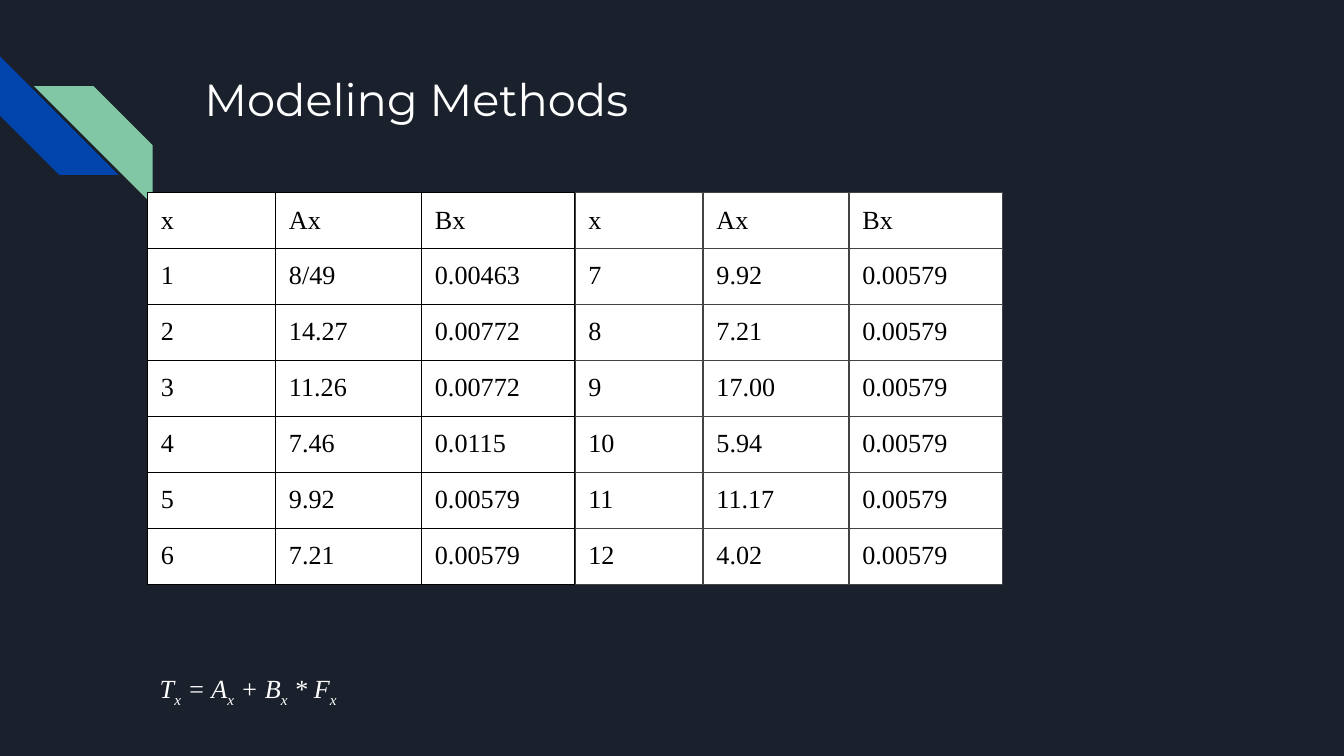
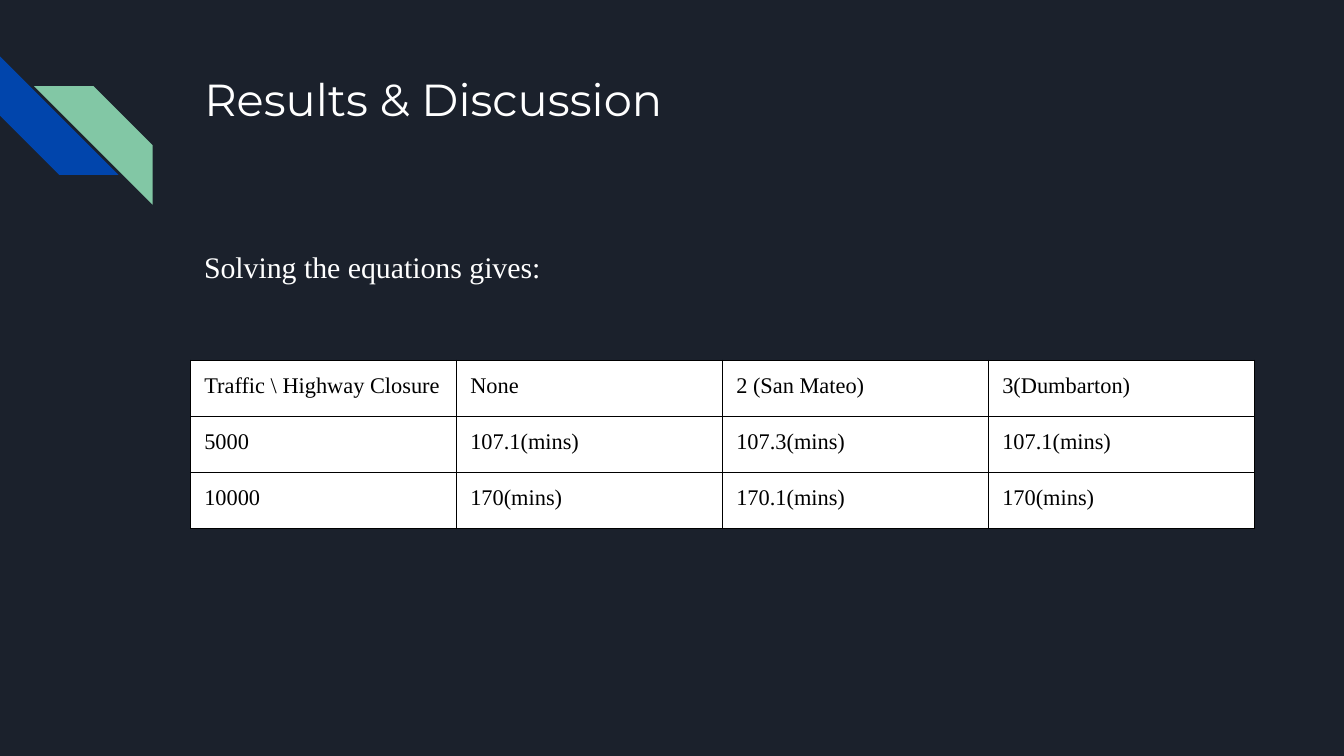
from pptx import Presentation
from pptx.dml.color import RGBColor
from pptx.enum.shapes import MSO_SHAPE as Shape
from pptx.enum.text import MSO_ANCHOR as Anchor, MSO_AUTO_SIZE as AutoSize, PP_ALIGN as Align
from pptx.oxml import parse_xml
from pptx.oxml.ns import nsdecls
from pptx.util import Pt

NAVY = RGBColor(0x1B, 0x21, 0x2C)
BLUE = RGBColor(0x01, 0x45, 0xAC)
GREEN = RGBColor(0x82, 0xC7, 0xA5)
WHITE = RGBColor(0xFF, 0xFF, 0xFF)
BLACK = RGBColor(0x00, 0x00, 0x00)
GRAY = RGBColor(0x43, 0x43, 0x43)

TITLE_FONT = "Montserrat"
BODY_FONT = "Times New Roman"
INSET = 7.2
CONTENT_LEFT = 102.24
CONTENT_WIDTH = 554.5
ROW_HEIGHT = 30
STRIPE_SIZE = 63.5

COEFFICIENTS = [
    ("1", "8/49", "0.00463"),
    ("2", "14.27", "0.00772"),
    ("3", "11.26", "0.00772"),
    ("4", "7.46", "0.0115"),
    ("5", "9.92", "0.00579"),
    ("6", "7.21", "0.00579"),
    ("7", "9.92", "0.00579"),
    ("8", "7.21", "0.00579"),
    ("9", "17.00", "0.00579"),
    ("10", "5.94", "0.00579"),
    ("11", "11.17", "0.00579"),
    ("12", "4.02", "0.00579"),
]
COEFFICIENT_HEADER = ("x", "Ax", "Bx")
COEFFICIENT_COLUMNS = (68.6, 78.2, 82.2)

TRAVEL_TIMES = [
    ("Traffic \\ Highway Closure", "None", "2 (San Mateo)", "3(Dumbarton)"),
    ("5000", "107.1(mins)", "107.3(mins)", "107.1(mins)"),
    ("10000", "170(mins)", "170.1(mins)", "170(mins)"),
]


class Deck:
    def __init__(self):
        self.presentation = Presentation()
        self.presentation.slide_width = Pt(720)
        self.presentation.slide_height = Pt(405)
        background = self.presentation.slide_master.background.fill
        background.solid()
        background.fore_color.rgb = NAVY
        self.slide = None

    def start_slide(self, title):
        layout = self.presentation.slide_layouts.get_by_name("Title Only")
        self.slide = self.presentation.slides.add_slide(layout)
        self.stripe(0, 30.2, 270, BLUE)
        self.stripe(18.3, 46.2, 90, GREEN)
        heading = self.slide.shapes.title
        heading.left, heading.top = Pt(CONTENT_LEFT), Pt(31)
        heading.width, heading.height = Pt(CONTENT_WIDTH), Pt(72)
        self.prepare_frame(heading.text_frame)
        heading.text_frame.text = title
        paragraph = heading.text_frame.paragraphs[0]
        paragraph.alignment = Align.LEFT
        self.style_font(paragraph.runs[0].font, 24, WHITE, TITLE_FONT)

    def stripe(self, left, top, rotation, color):
        band = self.slide.shapes.add_shape(
            Shape.DIAGONAL_STRIPE, Pt(left), Pt(top), Pt(STRIPE_SIZE), Pt(STRIPE_SIZE))
        band.adjustments[0] = 0.5
        band.rotation = rotation
        band.shadow.inherit = False
        band.fill.solid()
        band.fill.fore_color.rgb = color
        band.line.fill.background()

    def text(self, left, top, width, height, parts, size, spacing, italic=None, indent=0):
        """Add one paragraph; every second entry of parts is a subscript."""
        box = self.slide.shapes.add_textbox(Pt(left), Pt(top), Pt(width), Pt(height))
        self.prepare_frame(box.text_frame)
        paragraph = box.text_frame.paragraphs[0]
        paragraph.line_spacing = spacing
        if indent:
            paragraph._p.get_or_add_pPr().set("indent", str(Pt(indent)))
        for position, part in enumerate(parts):
            run = paragraph.add_run()
            run.text = part
            self.style_font(run.font, size, WHITE)
            run.font.italic = italic
            if position % 2:
                run.font._element.set("baseline", "-25000")

    def table(self, left, top, column_widths, rows, size, border):
        frame = self.slide.shapes.add_table(
            len(rows), len(column_widths), Pt(left), Pt(top),
            Pt(sum(column_widths)), Pt(ROW_HEIGHT * len(rows)))
        grid = frame.table
        grid.first_row = grid.horz_banding = False
        for column, width in zip(grid.columns, column_widths):
            column.width = Pt(width)
        for row, values in zip(grid.rows, rows):
            row.height = Pt(ROW_HEIGHT)
            for cell, value in zip(row.cells, values):
                self.fill_cell(cell, value, size, border)

    def fill_cell(self, cell, value, size, border):
        cell.text_frame.text = value
        self.style_font(cell.text_frame.paragraphs[0].runs[0].font, size, BLACK)
        self.set_insets(cell)
        cell.vertical_anchor = Anchor.TOP
        cell.fill.solid()
        cell.fill.fore_color.rgb = WHITE
        properties = cell._tc.get_or_add_tcPr()
        for position, side in enumerate("LRTB"):
            properties.insert(position, parse_xml(
                f'<a:ln{side} {nsdecls("a")} w="{Pt(0.75)}"><a:solidFill>'
                f'<a:srgbClr val="{border}"/></a:solidFill></a:ln{side}>'))

    def prepare_frame(self, frame):
        frame.word_wrap = True
        frame.auto_size = AutoSize.NONE
        frame.vertical_anchor = Anchor.TOP
        self.set_insets(frame)

    @staticmethod
    def set_insets(holder):
        holder.margin_left = holder.margin_right = Pt(INSET)
        holder.margin_top = holder.margin_bottom = Pt(INSET)

    @staticmethod
    def style_font(font, size, color, name=BODY_FONT):
        font.name = name
        font.size = Pt(size)
        font.color.rgb = color


def add_methods(deck):
    deck.start_slide("Modeling Methods")
    formula = ["T", "x", " = A", "x", " + B", "x", " * F", "x"]
    deck.text(42.5, 334, 614, 49.7, formula, 14, 2.0, italic=True, indent=36)
    left = 79
    right = left + sum(COEFFICIENT_COLUMNS)
    for table_left, months, border in (
            (right, COEFFICIENTS[6:], GRAY), (left, COEFFICIENTS[:6], BLACK)):
        deck.table(table_left, 103, COEFFICIENT_COLUMNS,
                   [COEFFICIENT_HEADER] + months, 14, border)


def add_results(deck):
    deck.start_slide("Results & Discussion")
    deck.text(CONTENT_LEFT, 123, CONTENT_WIDTH, 229,
              ["Solving the equations gives:"], 16, 1.15)
    deck.table(CONTENT_LEFT, 193, [142.5] * 4, TRAVEL_TIMES, 12, BLACK)


def main():
    deck = Deck()
    add_methods(deck)
    add_results(deck)
    deck.presentation.save("out.pptx")


if __name__ == "__main__":
    main()
